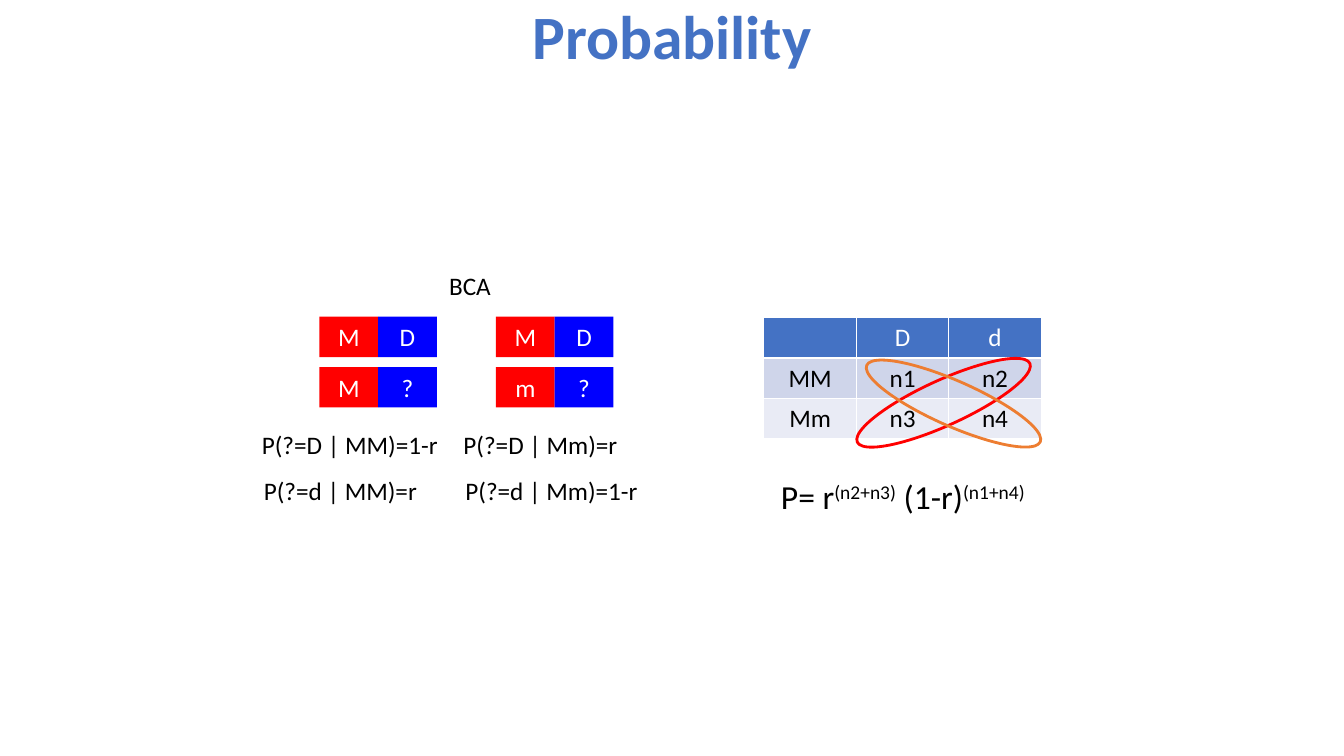
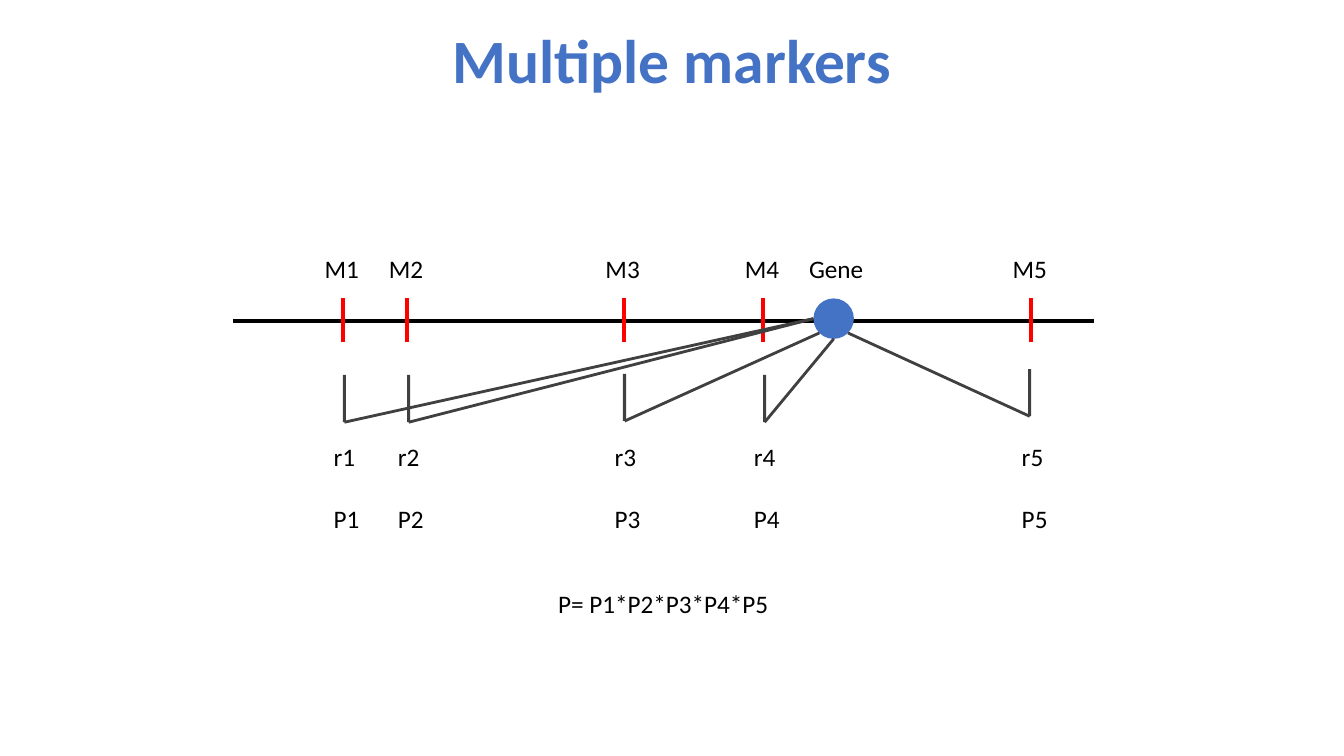
"""Build two slides on marker probability and multiple markers."""
from itertools import product
from typing import NamedTuple

from lxml.etree import SubElement
from pptx import Presentation
from pptx.dml.color import RGBColor as Rgb
from pptx.enum.shapes import MSO_CONNECTOR as Link, MSO_SHAPE as Form
from pptx.enum.text import MSO_ANCHOR as Anchor, PP_ALIGN as Align
from pptx.oxml.ns import qn
from pptx.util import Cm, Pt

HUES = {
    "blue": "4472C4", "red": "FF0000", "deep": "0000FF", "orange": "ED7D31",
    "black": "000000", "white": "FFFFFF", "grey": "404040",
    "band": "CFD5EA", "pale": "E9EBF5",
}
FONT = "Calibri"
LINE = 1.02


class Box(NamedTuple):
    x: float
    y: float
    w: float
    h: float = LINE


class Ring(NamedTuple):
    box: Box
    turn: float
    hue: str


class Mark(NamedTuple):
    x: float
    stem: Box
    start: tuple[float, float]


def hue(name: str) -> Rgb:
    return Rgb.from_string(HUES[name])


def style(para, size: float, tint: str, bold: bool = False, align=Align.CENTER) -> None:
    para.alignment = align
    font = para.font
    font.name, font.size, font.bold = FONT, Pt(size), bold
    font.color.rgb = hue(tint)


def write(slide, box: Box, text: str, size: float = 18, tint: str = "black",
          bold: bool = False, align=Align.CENTER):
    frame = slide.shapes.add_textbox(*map(Cm, box)).text_frame
    frame.word_wrap = True
    para = frame.paragraphs[0]
    para.text = text
    style(para, size, tint, bold, align)
    return frame


def title(slide, text: str, height: float) -> None:
    frame = write(slide, Box(5.51, 0, 22.86, height), text, 44, "blue", True)
    frame.vertical_anchor = Anchor.MIDDLE
    frame.paragraphs[0].line_spacing = 0.9


def draw(slide, form: Form, box: Box, fill: str = "", edge: str = ""):
    shape = slide.shapes.add_shape(form, *map(Cm, box))
    shape.shadow.inherit = False
    if fill:
        shape.fill.solid()
        shape.fill.fore_color.rgb = hue(fill)
    else:
        shape.fill.background()
    if edge:
        shape.line.color.rgb = hue(edge)
        shape.line.width = Pt(2)
    else:
        shape.line.fill.background()
    return shape


def join(slide, start: tuple[float, float], end: tuple[float, float],
         tint: str, width: float):
    line = slide.shapes.add_connector(Link.STRAIGHT, *map(Cm, start + end))
    line.line.color.rgb = hue(tint)
    line.line.width = Pt(width)
    SubElement(line._element.spPr, qn("a:effectLst"))
    return line


def counts(slide) -> None:
    rows = [("", "D", "d"), ("MM", "n1", "n2"), ("Mm", "n3", "n4")]
    looks = [("blue", "white"), ("band", "black"), ("pale", "black")]
    box = Box(19.25, 8, 6.99, 3 * LINE)
    table = slide.shapes.add_table(3, 3, *map(Cm, box)).table
    for r, c in product(range(3), repeat=2):
        cell = table.cell(r, c)
        fill, tint = looks[r]
        cell.fill.solid()
        cell.fill.fore_color.rgb = hue(fill)
        cell.vertical_anchor = Anchor.MIDDLE
        para = cell.text_frame.paragraphs[0]
        para.text = rows[r][c]
        style(para, 18, tint)


def chance(slide) -> None:
    title(slide, "Probability", 1.98)
    counts(slide)
    write(slide, Box(10.36, 6.68, 2.97), "BCA")
    for i, pair in enumerate([("MD", "M?"), ("MD", "m?")]):
        for r, c in product(range(2), repeat=2):
            box = Box(8.05 + 4.45 * i + 1.48 * c, 7.98 + 1.27 * r, 1.48)
            cell = draw(slide, Form.RECTANGLE, box, ("red", "deep")[c])
            para = cell.text_frame.paragraphs[0]
            para.text = pair[r][c]
            style(para, 18, "white")
    rules = [("P(?=D | MM)=1-r", "P(?=D | Mm)=r"),
             ("P(?=d | MM)=r", "P(?=d | Mm)=1-r")]
    for r, c in product(range(2), repeat=2):
        box = Box(6.35 + 5.08 * c + 0.05 * r, 10.69 + 1.17 * r, 5.08)
        write(slide, box, rules[r][c], align=Align.LEFT)
    para = write(slide, Box(18.31, 11.86, 8.89, 1.28), "", 24).paragraphs[0]
    for base, power in [("P= r", "(n2+n3)"), (" (1-r)", "(n1+n4)")]:
        para.add_run().text = base
        run = para.add_run()
        run.text = power
        run.font._element.set("baseline", "30000")
    for ring in [Ring(Box(21.39, 9.58, 4.78, 1.14), 335.5, "red"),
                 Ring(Box(21.64, 9.6, 4.78, 1.14), 23.8, "orange")]:
        draw(slide, Form.OVAL, ring.box, edge=ring.hue).rotation = ring.turn


def genes(slide) -> None:
    title(slide, "Multiple markers", 3.18)
    left, low = (20.5, 8.03), (21.01, 8.54)
    marks = [
        Mark(8.64, Box(8.64, 9.45, 0.08, 1.19), left),
        Mark(10.26, Box(10.26, 9.45, 0.08, 1.19), left),
        Mark(15.72, Box(15.7, 9.42, 0.08, 1.19), (20.65, 8.39)),
        Mark(19.23, Box(19.23, 9.45, 0.08, 1.19), low),
        Mark(25.98, Box(25.91, 9.3, 0.08, 1.19), (21.37, 8.39)),
    ]
    labels = [("M", -0.71, 6.25), ("r", -0.48, 11), ("P", -0.48, 12.55)]
    join(slide, (5.87, 8.08), (27.56, 8.08), "black", 3)
    for n, mark in enumerate(marks, 1):
        join(slide, (mark.x, 8.61), (mark.x, 7.52), "red", 3)
        for name, shift, y in labels:
            write(slide, Box(mark.x + shift, y, 1.42), f"{name}{n}", align=Align.LEFT)
    draw(slide, Form.OVAL, Box(20.5, 7.52, LINE), "blue")
    write(slide, Box(20.14, 6.27, 1.96), "Gene", align=Align.LEFT)
    for mark in marks:
        stem = draw(slide, Form.RECTANGLE, mark.stem, "grey")
        join(slide, mark.start, mark.start, "grey", 2).end_connect(stem, 2)
    write(slide, Box(12.27, 14.71, 8.89), "P= P1*P2*P3*P4*P5")


def main() -> None:
    deck = Presentation()
    deck.slide_width, deck.slide_height = Cm(33.87), Cm(19.05)
    for build in (chance, genes):
        build(deck.slides.add_slide(deck.slide_layouts[6]))
    deck.save("out.pptx")


if __name__ == "__main__":
    main()
